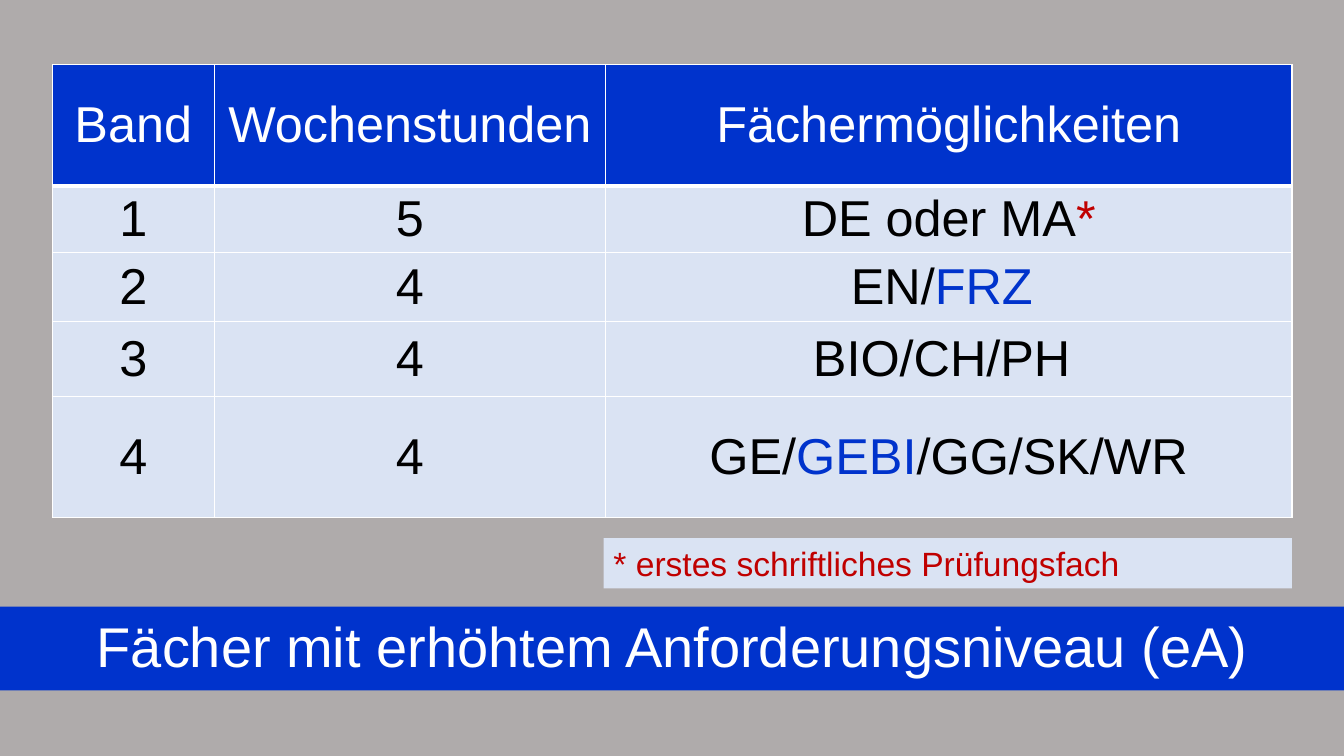
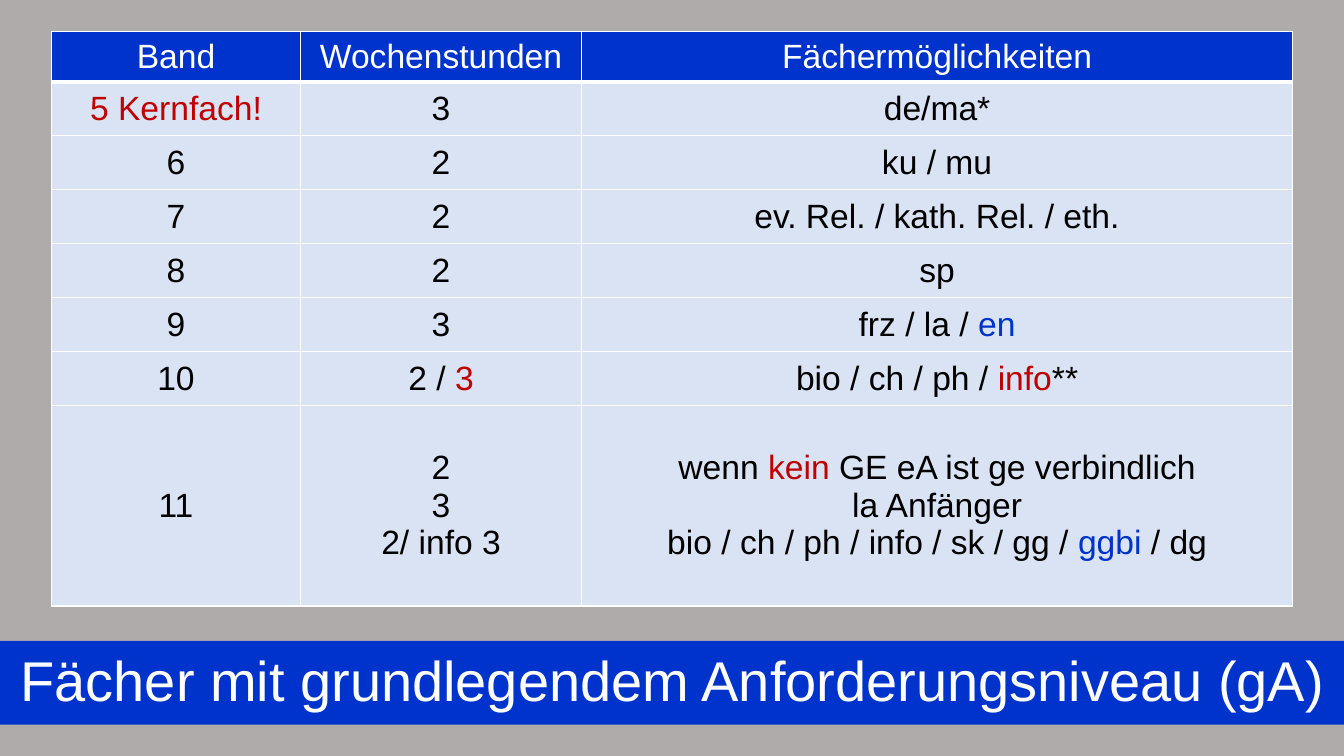
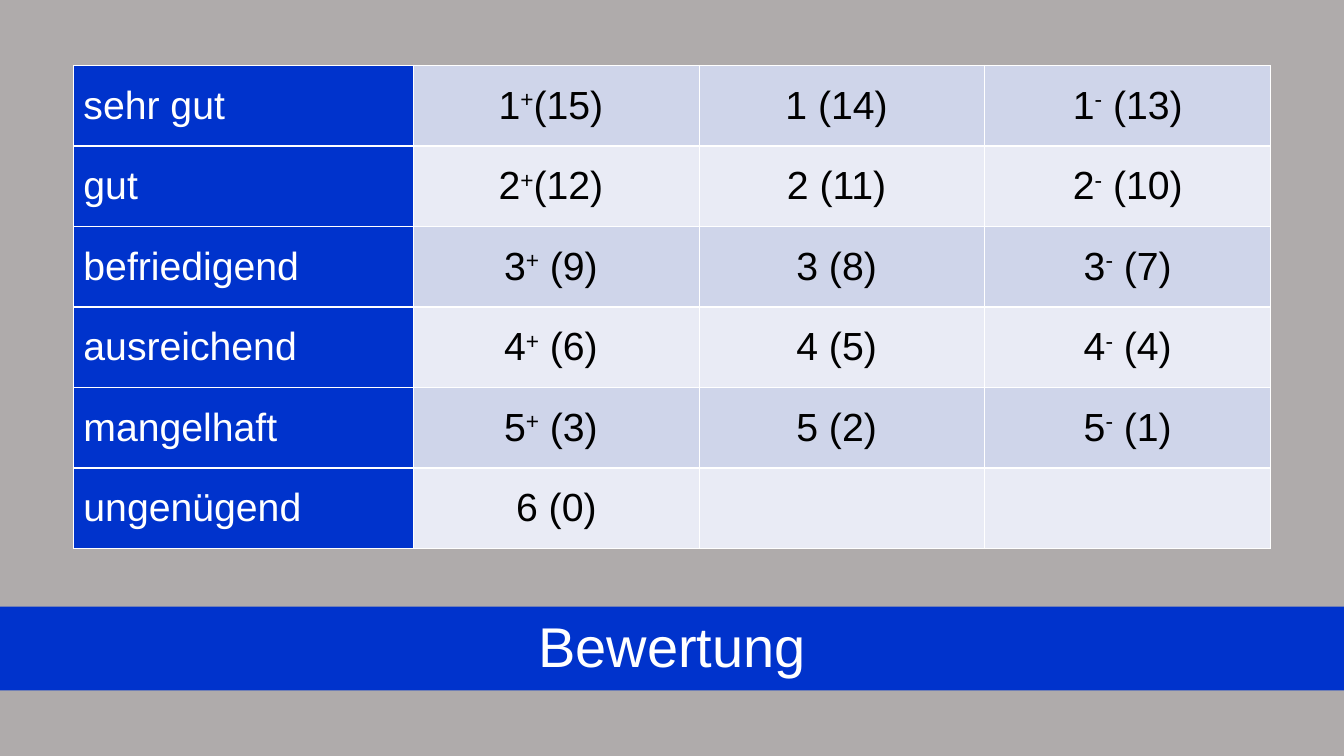
from dataclasses import dataclass
from itertools import product

from lxml.etree import SubElement
from pptx import Presentation
from pptx.dml.color import RGBColor as Color
from pptx.enum.shapes import MSO_SHAPE as Shape
from pptx.enum.text import MSO_ANCHOR as Anchor, PP_ALIGN as Align
from pptx.oxml.ns import qn
from pptx.util import Cm, Pt


@dataclass(frozen=True)
class Theme:
    font: str = "Arial"
    background: str = "AFABAB"
    blue: str = "0033CC"
    red: str = "C00000"
    white: str = "FFFFFF"
    black: str = "000000"
    pale: str = "DAE3F3"
    stripes: tuple = ("CFD5EA", "E9EBF5")
    title_size: int = 40
    large_size: int = 36
    medium_size: int = 28
    small_size: int = 24
    thin_border: int = 1
    thick_border: int = 3


@dataclass(frozen=True)
class Box:
    left: float
    top: float
    width: float
    height: float

    def lengths(self):
        return [Cm(value) for value in (self.left, self.top, self.width, self.height)]


@dataclass(frozen=True)
class Run:
    text: str
    color: str = ""
    raised: bool = False


THEME = Theme()
SLIDE_WIDTH, SLIDE_HEIGHT = 33.87, 19.05
HEADINGS = ["Band", "Wochenstunden", "Fächermöglichkeiten"]


def red(text):
    return Run(text, THEME.red)


def blue(text):
    return Run(text, THEME.blue)


def raised(text):
    return Run(text, raised=True)


def set_values(target, values):
    for name, value in values.items():
        setattr(target, name, value)


def write_line(paragraph, runs, size, color, align):
    paragraph.alignment = align
    for part in runs:
        part = Run(part) if isinstance(part, str) else part
        run = paragraph.add_run()
        run.text = part.text
        set_values(run.font, {"name": THEME.font, "size": Pt(size)})
        run.font.color.rgb = Color.from_string(part.color or color)
        if part.raised:
            run.font._element.set("baseline", "30000")


def write_lines(frame, lines, size, color, align):
    for index, runs in enumerate(lines):
        paragraph = frame.add_paragraph() if index else frame.paragraphs[0]
        write_line(paragraph, runs, size, color, align)


def paint(target, color):
    target.fill.solid()
    target.fill.fore_color.rgb = Color.from_string(color)


def set_borders(cell, widths):
    properties = cell._tc.get_or_add_tcPr()
    for side in "LRTB":
        width = widths.get(side, THEME.thin_border)
        line = SubElement(properties, qn(f"a:ln{side}"), w=str(Pt(width)))
        fill = SubElement(line, qn("a:solidFill"))
        SubElement(fill, qn("a:srgbClr"), val=THEME.white)


def add_panel(slide, box, text, fill, color, size, align, frame_values):
    shape = slide.shapes.add_shape(Shape.RECTANGLE, *box.lengths())
    shape.shadow.inherit = False
    paint(shape, fill)
    shape.line.fill.background()
    set_values(shape.text_frame, {"word_wrap": True, "vertical_anchor": Anchor.TOP, **frame_values})
    write_lines(shape.text_frame, [[text]], size, color, align)
    return shape


def add_title_band(slide, box, text):
    insets = {"margin_left": Cm(0.25), "margin_top": Cm(0.3),
              "margin_right": Cm(0.25), "margin_bottom": Cm(0.13)}
    band = add_panel(slide, box, text, THEME.blue, THEME.white, THEME.title_size, Align.CENTER, insets)
    band.text_frame.paragraphs[0].line_spacing = 0.9


def add_footnote(slide, box, text):
    add_panel(slide, box, text, THEME.pale, THEME.red, THEME.small_size, Align.LEFT, {})


def add_grid(slide, left, top, columns, heights, rows, size, look):
    box = Box(left, top, sum(columns), sum(heights))
    table = slide.shapes.add_table(len(heights), len(columns), *box.lengths()).table
    set_values(table, {"first_row": False, "horz_banding": False})
    for column, width in zip(table.columns, columns):
        column.width = Cm(width)
    for row, height in zip(table.rows, heights):
        row.height = Cm(height)
    for row, column in product(range(len(heights)), range(len(columns))):
        fill, color, align, borders = look(row, column)
        cell = table.cell(row, column)
        cell.vertical_anchor = Anchor.MIDDLE
        set_borders(cell, borders)
        paint(cell, fill)
        content = rows[row][column]
        lines = [[content]] if isinstance(content, str) else content
        if content:
            write_lines(cell.text_frame, lines, size, color, align)


def subject_look(row, column):
    if row == 0:
        return THEME.blue, THEME.white, Align.CENTER, {"B": THEME.thick_border}
    borders = {"T": THEME.thick_border} if row == 1 else {}
    return THEME.pale, THEME.black, Align.CENTER, borders


def grade_look(row, column):
    if column == 0:
        return THEME.blue, THEME.white, Align.LEFT, {}
    return THEME.stripes[row % 2], THEME.black, Align.CENTER, {}


def add_base_slide(presentation, title, band_top=15.29):
    slide = presentation.slides.add_slide(presentation.slide_layouts[6])
    paint(slide.background, THEME.background)
    add_title_band(slide, Box(0, band_top, SLIDE_WIDTH, 2.11), title)
    return slide


def add_advanced_slide(presentation):
    slide = add_base_slide(presentation, "Fächer mit erhöhtem Anforderungsniveau (eA)")
    rows = [
        HEADINGS,
        ["1", "5", [["DE oder MA", red("*")]]],
        ["2", "4", [["EN/", blue("FRZ ")]]],
        ["3", "4", "BIO/CH/PH "],
        ["4", "4", [["GE/", blue("GEBI"), "/GG/SK/WR"]]],
    ]
    add_grid(slide, 1.32, 1.63, [4.08, 9.86, 17.3], [3.05, 1.65, 1.75, 1.88, 3.05],
             rows, THEME.large_size, subject_look)
    add_footnote(slide, Box(15.21, 13.56, 17.35, 1.27), "* erstes schriftliches Prüfungsfach")


def add_basic_slide(presentation):
    slide = add_base_slide(presentation, "Fächer mit grundlegendem Anforderungsniveau (gA)", 16.15)
    rows = [
        HEADINGS,
        [[[red("5 Kernfach!")]], "3", "de/ma*"],
        ["6", "2", "ku / mu"],
        ["7", "2", "ev. Rel. / kath. Rel. / eth."],
        ["8", "2", "sp"],
        ["9", "3", [["frz / la / ", blue("en")]]],
        ["10", [["2 / ", red("3")]], [["bio / ch / ph / ", red("info"), "**"]]],
        ["11", [["2"], ["3"], ["2/ info 3"]],
         [["wenn ", red("kein "), "GE eA ist ge verbindlich"],
          ["la Anfänger"],
          ["bio / ch / ph / info / sk / gg / ", blue("ggbi "), "/ dg"]]],
    ]
    add_grid(slide, 1.3, 0.79, [6.27, 7.09, 17.91], [1.27] + [1.36] * 6 + [5.05],
             rows, THEME.small_size, subject_look)


def add_grading_slide(presentation):
    slide = add_base_slide(presentation, "Bewertung")
    names = ["sehr gut", "gut", "befriedigend", "ausreichend", "mangelhaft"]
    rows = []
    for grade, name in enumerate(names, 1):
        best = 18 - 3 * grade
        gap = "" if best > 9 else " "
        rows.append([
            name,
            [[str(grade), raised("+"), f"{gap}({best}) "]],
            f"{grade} ({best - 1}) ",
            [[str(grade), raised("-"), f" ({best - 2})"]],
        ])
    rows.append(["ungenügend", "6 (0)", "", ""])
    add_grid(slide, 1.85, 1.65, [8.57] + [7.2] * 3, [2.03] * 6,
             rows, THEME.medium_size, grade_look)


def main():
    presentation = Presentation()
    set_values(presentation, {"slide_width": Cm(SLIDE_WIDTH), "slide_height": Cm(SLIDE_HEIGHT)})
    for add_slide in (add_advanced_slide, add_basic_slide, add_grading_slide):
        add_slide(presentation)
    presentation.save("out.pptx")


if __name__ == "__main__":
    main()
